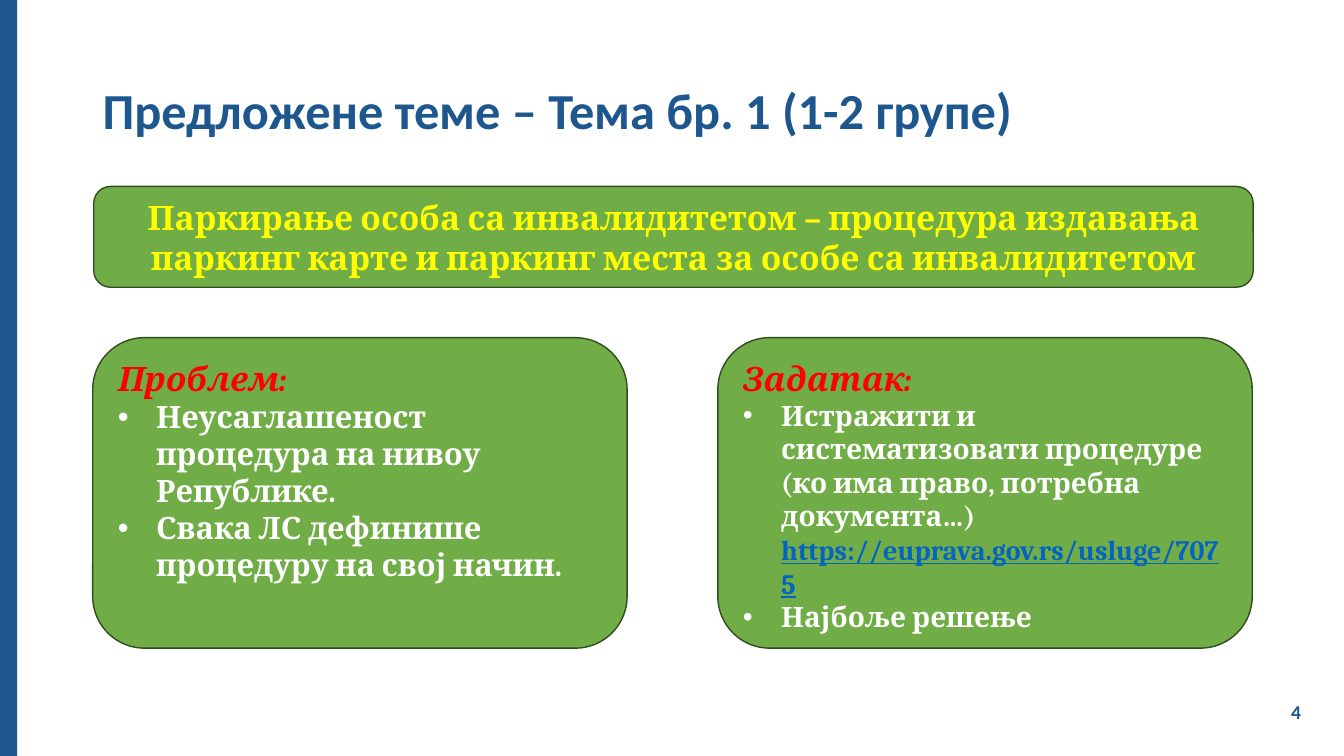
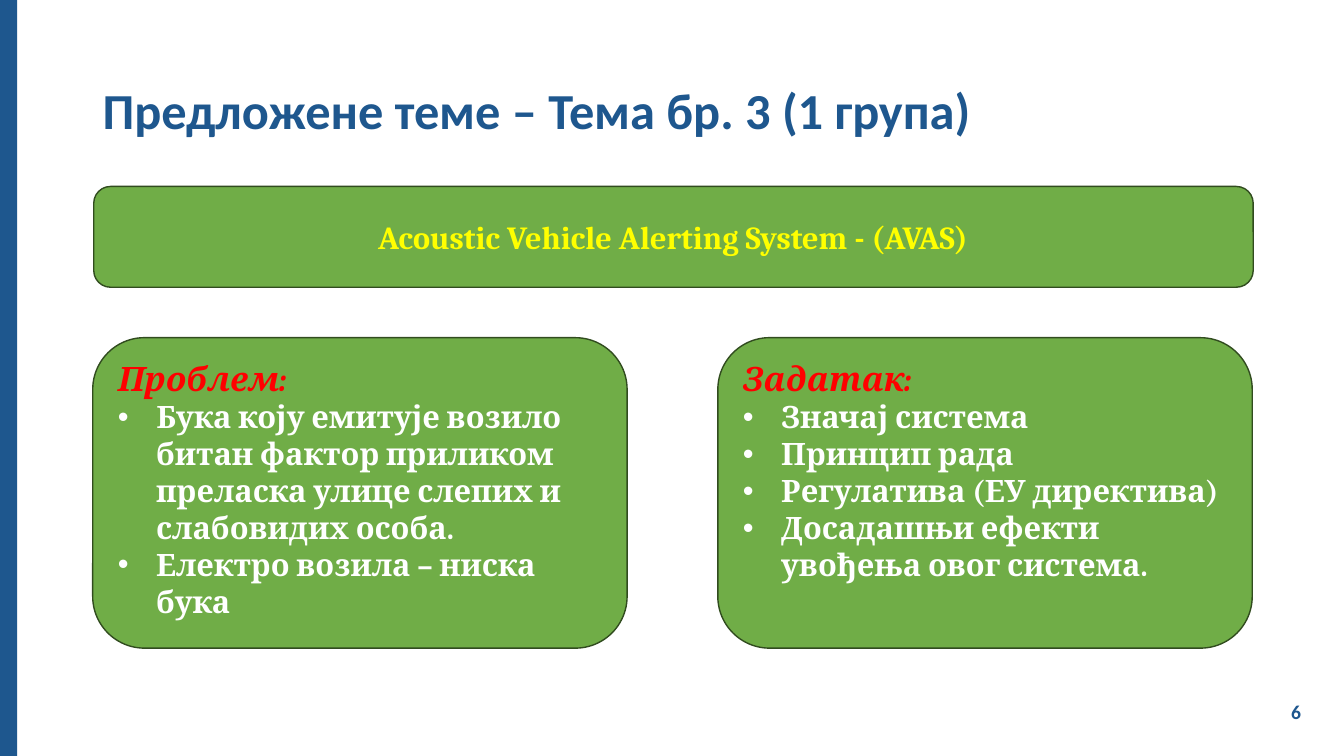
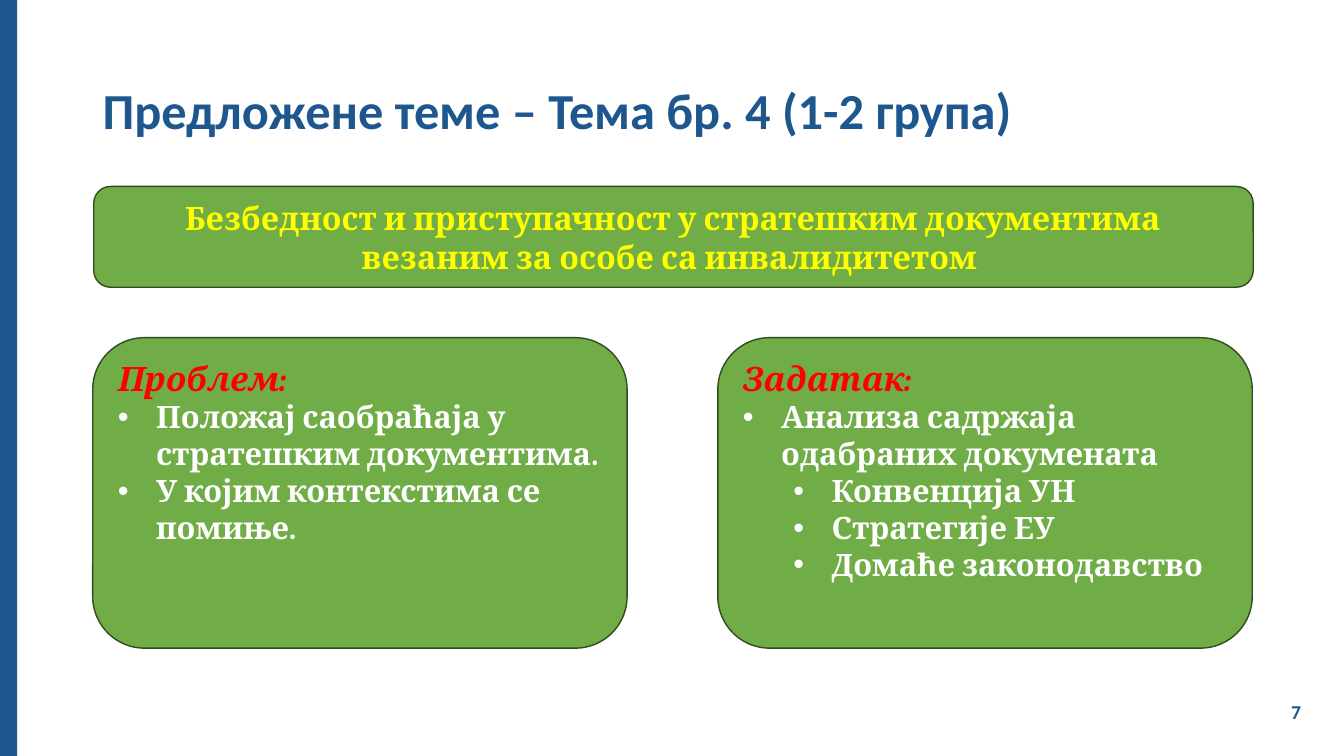
"""Build three topic slides, each with a subject band, a problem box and a task box."""
from lxml.etree import SubElement
from pptx import Presentation
from pptx.dml.color import RGBColor
from pptx.enum.shapes import MSO_SHAPE as Preset
from pptx.enum.text import MSO_ANCHOR as Anchor, PP_ALIGN as Align
from pptx.oxml.ns import qn
from pptx.util import Inches, Pt

BLUE, GREEN, DARK_GREEN = "1E578E", "70AD47", "314C1F"
YELLOW, RED, WHITE, LINK = "FFFF00", "FF0000", "FFFFFF", "0563C1"
HEADING_FONT, BODY_FONT = "Calibri", "Cambria"
MARGIN, BOX_WIDTH, TASK_LEFT = 0.92, 5.3, 7.12
BULLET_INDENT, LEVEL_STEP = 0.38, 0.5

TOPICS = [
    {
        "number": "4",
        "title": "Предложене теме – Тема бр. 1 (1-2 групе)",
        "subject": "Паркирање особа са инвалидитетом – процедура издавања "
                   "паркинг карте и паркинг места за особе са инвалидитетом",
        "subject_size": 24,
        "task_size": 20,
        "problem": [
            (0, "Неусаглашеност процедура на нивоу Републике."),
            (0, "Свака ЛС дефинише процедуру на свој начин."),
        ],
        "task": [
            (0, "Истражити и систематизовати процедуре (ко има право, потребна документа…) ",
             "https://euprava.gov.rs/usluge/7075"),
            (0, "Најбоље решење"),
        ],
    },
    {
        "number": "6",
        "title": "Предложене теме – Тема бр. 3 (1 група)",
        "subject": "Acoustic Vehicle Alerting System - (AVAS)",
        "subject_size": 23,
        "task_size": 22,
        "problem": [
            (0, "Бука коју емитује возило битан фактор приликом преласка улице "
                "слепих и слабовидих особа."),
            (0, "Електро возила – ниска бука"),
        ],
        "task": [
            (0, "Значај система"),
            (0, "Принцип рада"),
            (0, "Регулатива (ЕУ директива)"),
            (0, "Досадашњи ефекти увођења овог система."),
        ],
    },
    {
        "number": "7",
        "title": "Предложене теме – Тема бр. 4 (1-2 група)",
        "subject": "Безбедност и приступачност у стратешким документима "
                   "везаним за особе са инвалидитетом ",
        "subject_size": 23,
        "task_size": 22,
        "problem": [
            (0, "Положај саобраћаја у стратешким документима."),
            (0, "У којим контекстима се помиње."),
        ],
        "task": [
            (0, "Анализа садржаја одабраних докумената"),
            (1, "Конвенција УН"),
            (1, "Стратегије ЕУ"),
            (1, "Домаће законодавство"),
        ],
    },
]


def color(value):
    return RGBColor.from_string(value)


def add_text(paragraph, text, size, fill, font=BODY_FONT, italic=False, underline=False):
    run = paragraph.add_run()
    run.text = text
    run.font.name, run.font.size, run.font.bold = font, Pt(size), True
    run.font.italic, run.font.underline = italic, underline
    run.font.color.rgb = color(fill)


def add_shape(slide, preset, place, fill, line=None, anchor=Anchor.TOP):
    shape = slide.shapes.add_shape(preset, *map(Inches, place))
    shape.shadow.inherit = False
    shape.fill.solid()
    shape.fill.fore_color.rgb = color(fill)
    if line:
        shape.line.color.rgb = color(line)
        shape.line.width = Pt(1)
    else:
        shape.line.fill.background()
    shape.text_frame.word_wrap = True
    shape.text_frame.vertical_anchor = anchor
    return shape


def add_label(slide, place, text, size, align):
    frame = slide.shapes.add_textbox(*map(Inches, place)).text_frame
    frame.word_wrap = True
    frame.vertical_anchor = Anchor.MIDDLE
    paragraph = frame.paragraphs[0]
    paragraph.alignment = align
    add_text(paragraph, text, size, BLUE, font=HEADING_FONT)
    return paragraph


def add_bullet(frame, level, size, text, link=None):
    paragraph = frame.add_paragraph()
    paragraph.alignment = Align.LEFT
    paragraph.level = level
    properties = paragraph._p.get_or_add_pPr()
    properties.set("marL", str(Inches(BULLET_INDENT + level * LEVEL_STEP)))
    properties.set("indent", str(-Inches(BULLET_INDENT)))
    SubElement(properties, qn("a:buFont"), typeface="Arial")
    SubElement(properties, qn("a:buChar"), char="•")
    add_text(paragraph, text, size, WHITE)
    if link:
        add_text(paragraph, link, size, LINK, underline=True)


def add_box(slide, left, heading, bullets, size):
    box = add_shape(slide, Preset.ROUNDED_RECTANGLE, (left, 3.35, BOX_WIDTH, 3.08),
                    GREEN, DARK_GREEN)
    paragraph = box.text_frame.paragraphs[0]
    paragraph.alignment = Align.LEFT
    add_text(paragraph, heading, 24, RED, italic=True)
    for level, *texts in bullets:
        add_bullet(box.text_frame, level, size, *texts)


def add_topic(presentation, topic):
    slide = presentation.slides.add_slide(presentation.slide_layouts[6])
    add_shape(slide, Preset.RECTANGLE, (0, 0, 0.17, 7.5), BLUE)
    add_label(slide, (12.6, 6.86, 0.51, 0.4), topic["number"], 14, Align.CENTER)
    title = add_label(slide, (MARGIN, 0.4, 11.5, 1.45), topic["title"], 36, Align.LEFT)
    title.line_spacing = 0.9
    band = add_shape(slide, Preset.ROUNDED_RECTANGLE, (0.93, 1.85, 11.5, 1),
                     GREEN, DARK_GREEN, Anchor.MIDDLE)
    paragraph = band.text_frame.paragraphs[0]
    paragraph.alignment = Align.CENTER
    add_text(paragraph, topic["subject"], topic["subject_size"], YELLOW)
    add_box(slide, MARGIN, "Проблем:", topic["problem"], 22)
    add_box(slide, TASK_LEFT, "Задатак:", topic["task"], topic["task_size"])


def main():
    presentation = Presentation()
    presentation.slide_width = Inches(13.33)
    presentation.slide_height = Inches(7.5)
    for topic in TOPICS:
        add_topic(presentation, topic)
    presentation.save("out.pptx")


if __name__ == "__main__":
    main()
